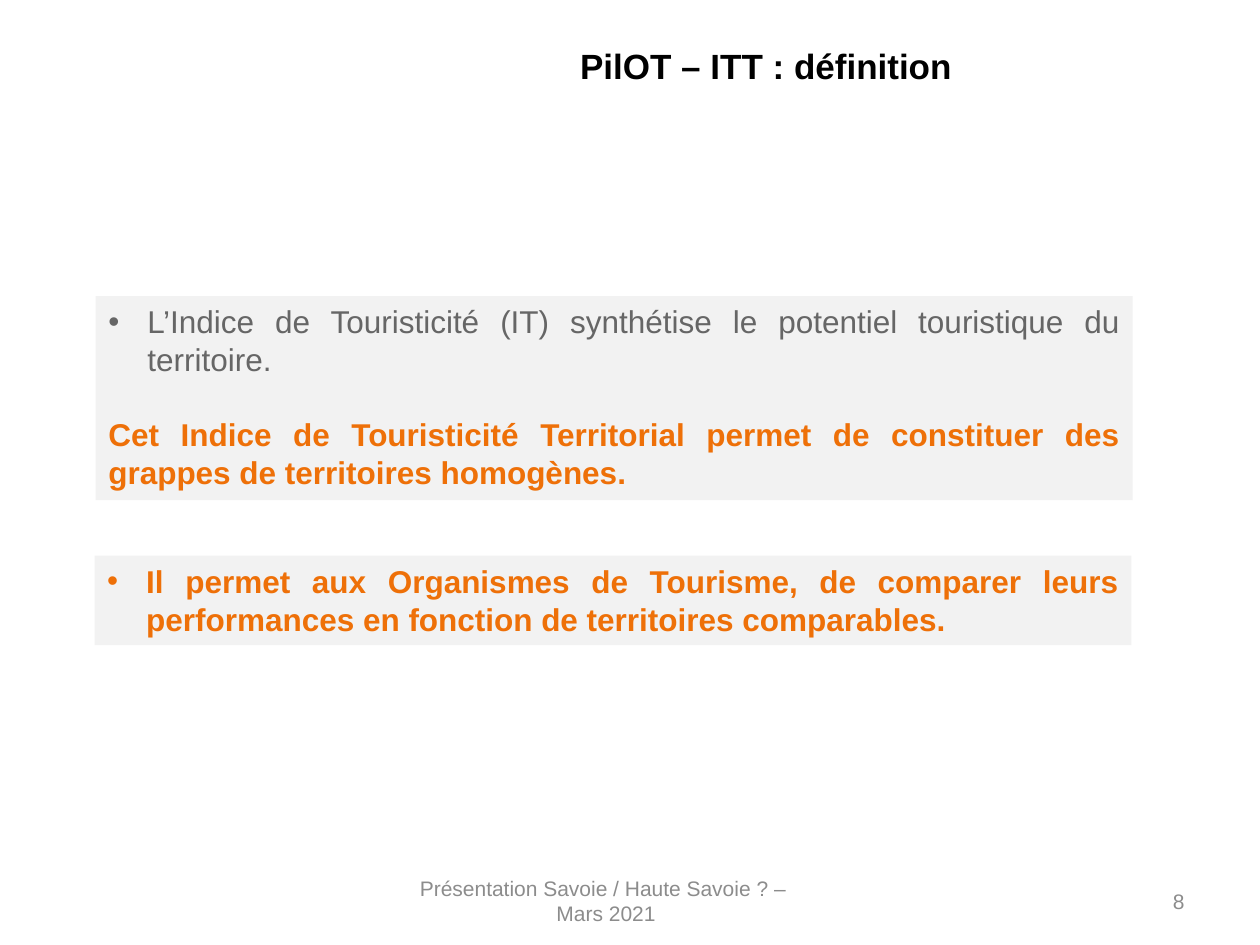
from lxml.etree import SubElement
from pptx import Presentation
from pptx.dml.color import RGBColor
from pptx.enum.text import MSO_ANCHOR as Anchor, MSO_AUTO_SIZE as AutoSize, PP_ALIGN as Align
from pptx.oxml.ns import qn
from pptx.util import Inches, Pt

BLACK = RGBColor(0x00, 0x00, 0x00)
GREY = RGBColor(0x66, 0x66, 0x66)
FOOTER_GREY = RGBColor(0x8C, 0x8C, 0x8C)
ORANGE = RGBColor(0xEE, 0x70, 0x08)
PANEL = RGBColor(0xF2, 0xF2, 0xF2)

TWO_CONTENT = 3
INDENT = Inches(0.31)


class SlideBuilder:
    font_name = "Arial"

    def __init__(self, deck):
        self.page = deck.slides.add_slide(deck.slide_layouts[TWO_CONTENT])

    def place(self, box, left, top, width, height, anchor):
        box.left, box.top = Inches(left), Inches(top)
        box.width, box.height = Inches(width), Inches(height)
        frame = box.text_frame
        frame.word_wrap = True
        frame.auto_size = AutoSize.NONE
        frame.vertical_anchor = anchor
        return frame

    def set_text(self, para, text, size, color, align, bold=False):
        para.text = text
        para.alignment = align
        font = para.font
        font.name, font.size, font.bold = self.font_name, Pt(size), bold
        font.color.rgb = color

    def mark(self, para, bulleted):
        """Set a hanging bullet, or switch off the template's bullet."""
        properties = para._p.get_or_add_pPr()
        properties.set("marL", str(INDENT if bulleted else 0))
        properties.set("indent", str(-INDENT if bulleted else 0))
        if bulleted:
            SubElement(properties, qn("a:buFont"), typeface="Arial")
            SubElement(properties, qn("a:buChar"), char="•")
        else:
            SubElement(properties, qn("a:buNone"))

    def title(self, text, *place):
        frame = self.place(self.page.shapes.title, *place, Anchor.TOP)
        self.set_text(frame.paragraphs[0], text, 20, BLACK, Align.CENTER, bold=True)

    def panel(self, index, items, *place):
        """Fill a body placeholder with (text, color, bold, bulleted) items."""
        box = self.page.placeholders[index]
        box.fill.solid()
        box.fill.fore_color.rgb = PANEL
        frame = self.place(box, *place, Anchor.TOP)
        for number, (text, color, bold, bulleted) in enumerate(items):
            para = frame.add_paragraph() if number else frame.paragraphs[0]
            self.mark(para, bulleted)
            para.space_before = Pt(21 if number else 0)
            self.set_text(para, text, 18, color, Align.JUSTIFY, bold)

    def footer(self, lines, align, *place):
        box = self.page.shapes.add_textbox(0, 0, 0, 0)
        frame = self.place(box, *place, Anchor.MIDDLE)
        for number, line in enumerate(lines):
            para = frame.add_paragraph() if number else frame.paragraphs[0]
            self.set_text(para, line, 12, FOOTER_GREY, align)


def main():
    deck = Presentation()
    deck.slide_width, deck.slide_height = Inches(10), Inches(7.5)
    slide = SlideBuilder(deck)
    slide.title("PilOT – ITT : définition", 2.67, 0.3, 6.82, 0.55)
    slide.panel(1, [
        ("L’Indice de Touristicité (IT) synthétise le potentiel touristique du territoire.",
         GREY, False, True),
        ("Cet Indice de Touristicité Territorial permet de constituer des grappes "
         "de territoires homogènes.", ORANGE, True, False),
    ], 0.76, 2.35, 8.23, 1.62)
    slide.panel(2, [
        ("Il permet aux Organismes de Tourisme, de comparer leurs performances "
         "en fonction de territoires comparables.", ORANGE, True, True),
    ], 0.75, 4.41, 8.23, 0.71)
    slide.footer(["Présentation Savoie / Haute Savoie ? – ", "Mars 2021"],
                 Align.CENTER, 2.7, 6.95, 4.22, 0.4)
    slide.footer(["8"], Align.RIGHT, 7.17, 6.95, 2.33, 0.4)
    deck.save("out.pptx")


if __name__ == "__main__":
    main()
